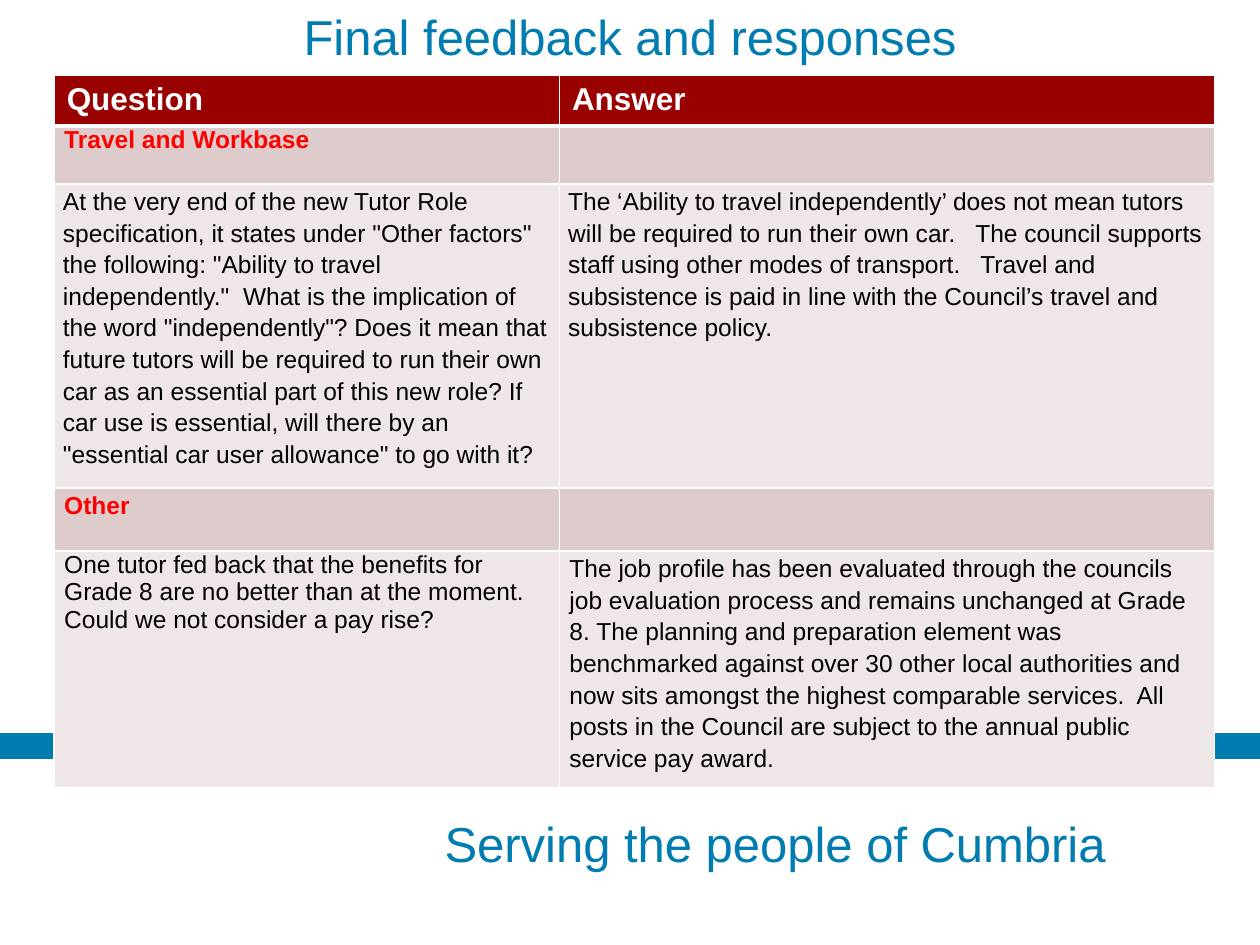
from typing import NamedTuple

import pptx
import pptx.dml.color
import pptx.enum.shapes
import pptx.enum.text
import pptx.oxml
import pptx.oxml.ns
import pptx.util
from pptx.util import Inches

COLORS = {
    "blue": "007CB0",
    "header": "990000",
    "band": "DECCCC",
    "body": "EFE7E7",
    "topic": "FF0000",
    "black": "000000",
    "white": "FFFFFF",
}
ALIGN = pptx.enum.text.PP_ALIGN
ANCHOR = pptx.enum.text.MSO_ANCHOR


class Style(NamedTuple):
    size: int
    color: str
    bold: bool = False


class Entry(NamedTuple):
    words: str = ""
    spacing: float = 1.0


class Row(NamedTuple):
    height: float
    fill: str
    style: Style
    inset_x: float
    inset_y: float
    question: Entry
    answer: Entry = Entry()


HEADING = Style(28, "blue")
HEADER = Style(18, "white", True)
TOPIC = Style(14, "topic", True)
BODY = Style(14, "black")

COLUMN_WIDTHS = (4.01, 5.2)
ROWS = (
    Row(0.4, "header", HEADER, 0.1, 0.05, Entry("Question"), Entry("Answer")),
    Row(0.46, "band", TOPIC, 0.08, 0, Entry("Travel and Workbase")),
    Row(2.41, "body", BODY, 0.07, 0,
        Entry('At the very end of the new Tutor Role specification, it states under '
              '"Other factors" the following: "Ability to travel independently."  What is '
              'the implication of the word "independently"? Does it mean that future tutors '
              'will be required to run their own car as an essential part of this new role? '
              'If car use is essential, will there by an "essential car user allowance" to '
              'go with it?', 1.15),
        Entry("The ‘Ability to travel independently’ does not mean tutors will be required "
              "to run their own car.   The council supports staff using other modes of "
              "transport.   Travel and subsistence is paid in line with the Council’s "
              "travel and subsistence policy.", 1.15)),
    Row(0.5, "band", TOPIC, 0.08, 0, Entry("Other", 1.15)),
    Row(1.88, "body", BODY, 0.08, 0,
        Entry("One tutor fed back that the benefits for Grade 8 are no better than at the "
              "moment.  Could we not consider a pay rise?"),
        Entry("The job profile has been evaluated through the councils job evaluation "
              "process and remains unchanged at Grade 8. The planning and preparation "
              "element was benchmarked against over 30 other local authorities and now sits "
              "amongst the highest comparable services.  All posts in the Council are "
              "subject to the annual public service pay award.", 1.15)),
)


def rgb(name: str) -> pptx.dml.color.RGBColor:
    return pptx.dml.color.RGBColor.from_string(COLORS[name])


def set_format(target, values: dict) -> None:
    for name, value in values.items():
        setattr(target, name, value)


def write(paragraph, words: str, style: Style) -> None:
    run = paragraph.add_run()
    run.text = words
    set_format(run.font, {"name": "Arial", "size": pptx.util.Pt(style.size),
                          "bold": style.bold})
    run.font.color.rgb = rgb(style.color)


def add_heading(slide, words: str, left: float, top: float, width: float,
                height: float, align, anchor) -> None:
    box = slide.shapes.add_textbox(Inches(left), Inches(top), Inches(width), Inches(height))
    set_format(box.text_frame, {"word_wrap": True, "vertical_anchor": anchor})
    paragraph = box.text_frame.paragraphs[0]
    paragraph.alignment = align
    write(paragraph, words, HEADING)


def add_stripe(slide) -> None:
    stripe = slide.shapes.add_connector(
        pptx.enum.shapes.MSO_CONNECTOR.STRAIGHT,
        Inches(10), Inches(5.92), Inches(0), Inches(5.92))
    stripe.line.width = pptx.util.Pt(15)
    stripe.line.color.rgb = rgb("blue")
    stripe._element.spPr.append(pptx.oxml.parse_xml(
        f'<a:effectLst {pptx.oxml.ns.nsdecls("a")}/>'))


def border_cell(cell, bottom: float, top: float) -> None:
    """Draw white cell borders; the bottom and top widths are in points."""
    properties = cell._tc.get_or_add_tcPr()
    widths = {"lnL": 1, "lnR": 1, "lnT": top, "lnB": bottom}
    for index, (side, width) in enumerate(widths.items()):
        properties.insert(index, pptx.oxml.parse_xml(
            f'<a:{side} {pptx.oxml.ns.nsdecls("a")} w="{pptx.util.Pt(width)}">'
            f'<a:solidFill><a:srgbClr val="{COLORS["white"]}"/></a:solidFill></a:{side}>'))


def fill_cell(cell, entry: Entry, row: Row) -> None:
    cell.fill.solid()
    cell.fill.fore_color.rgb = rgb(row.fill)
    set_format(cell, {
        "margin_left": Inches(row.inset_x), "margin_right": Inches(row.inset_x),
        "margin_top": Inches(row.inset_y), "margin_bottom": Inches(row.inset_y),
    })
    if entry.words:
        paragraph = cell.text_frame.paragraphs[0]
        paragraph.line_spacing = entry.spacing
        write(paragraph, entry.words, row.style)


def add_feedback_table(slide) -> None:
    feedback = slide.shapes.add_table(
        len(ROWS), len(COLUMN_WIDTHS), Inches(0.43), Inches(0.6),
        Inches(sum(COLUMN_WIDTHS)), Inches(sum(row.height for row in ROWS))).table
    for column, width in zip(feedback.columns, COLUMN_WIDTHS):
        column.width = Inches(width)
    for index, row in enumerate(ROWS):
        feedback.rows[index].height = Inches(row.height)
        for column, entry in enumerate((row.question, row.answer)):
            cell = feedback.cell(index, column)
            fill_cell(cell, entry, row)
            border_cell(cell, bottom=3 if index == 0 else 1, top=3 if index == 1 else 1)


def main() -> None:
    deck = pptx.Presentation()
    set_format(deck, {"slide_width": Inches(10), "slide_height": Inches(7.5)})
    slide = deck.slides.add_slide(deck.slide_layouts[6])
    add_stripe(slide)
    add_heading(slide, "Serving the people of Cumbria", 3.43, 6.41, 5.91, 0.57,
                ALIGN.LEFT, ANCHOR.TOP)
    add_heading(slide, "Final feedback and responses", 0.75, 0.05, 8.5, 0.47,
                ALIGN.CENTER, ANCHOR.MIDDLE)
    add_feedback_table(slide)
    deck.save("out.pptx")


if __name__ == "__main__":
    main()
